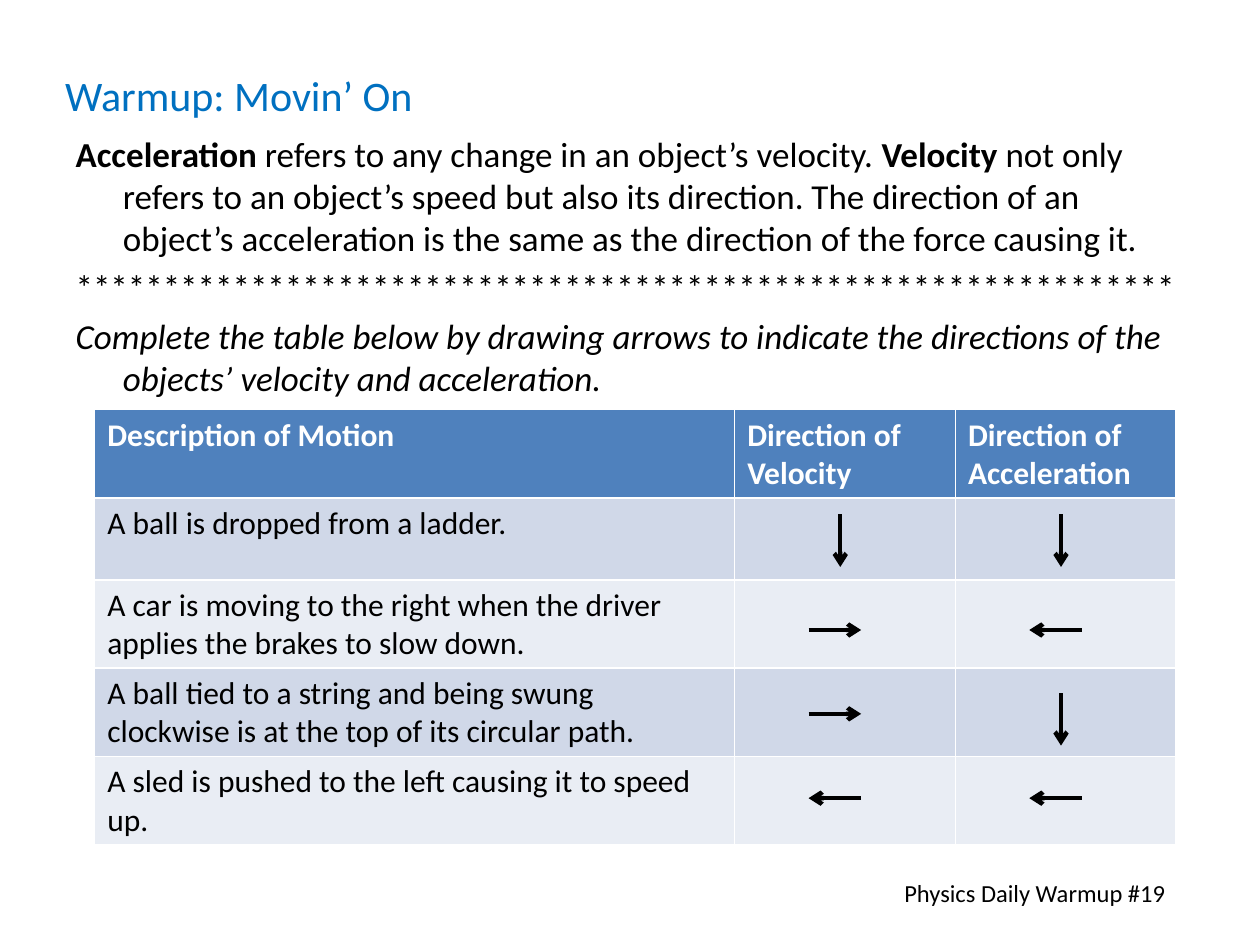
import dataclasses
import enum
import typing

import pptx
import pptx.dml.color
import pptx.enum.shapes
import pptx.enum.text
import pptx.oxml.ns
import pptx.util
from lxml import etree

Cm = pptx.util.Cm
RGB = pptx.dml.color.RGBColor


@dataclasses.dataclass(frozen=True)
class Theme:
    font: str = "Calibri"
    title: RGB = RGB(0x00, 0x70, 0xC0)
    ink: RGB = RGB(0x00, 0x00, 0x00)
    white: RGB = RGB(0xFF, 0xFF, 0xFF)
    header: RGB = RGB(0x4F, 0x81, 0xBD)
    bands: tuple = (RGB(0xD0, 0xD8, 0xE8), RGB(0xE9, 0xED, 0xF4))
    title_size: int = 24
    body_size: int = 20
    table_size: int = 18
    footer_size: int = 14
    arrow_width: float = 2.5


THEME = Theme()


class Direction(enum.Enum):
    DOWN = (0, 1)
    LEFT = (-1, 0)
    RIGHT = (1, 0)


class Run(typing.NamedTuple):
    text: str
    bold: bool = False
    italic: bool = False


class Motion(typing.NamedTuple):
    description: str
    arrow_y: float
    velocity: Direction
    acceleration: Direction


BODY = [
    [
        Run("Acceleration ", bold=True),
        Run("refers to any change in an object’s velocity. "),
        Run("Velocity ", bold=True),
        Run("not only refers to an object’s speed but also its direction. "
            "The direction of an object’s acceleration is the same as the "
            "direction of the force causing it."),
    ],
    [Run("*" * 63)],
    [Run("Complete the table below by drawing arrows to indicate the "
         "directions of the objects’ velocity and acceleration.", italic=True)],
]
HEADERS = ["Description of Motion", "Direction of Velocity", "Direction of Acceleration"]
MOTIONS = [
    Motion("A ball is dropped from a ladder.",
           10.79, Direction.DOWN, Direction.DOWN),
    Motion("A car is moving to the right when the driver applies the brakes to slow down.",
           12.7, Direction.RIGHT, Direction.LEFT),
    Motion("A ball tied to a string and being swung clockwise is at the top of its circular path.",
           14.39, Direction.RIGHT, Direction.DOWN),
    Motion("A sled is pushed to the left causing it to speed up.",
           16.09, Direction.LEFT, Direction.LEFT),
]
COLUMN_WIDTHS = [12.9, 4.45, 4.45]
ROW_HEIGHT = 1.65
ARROW_X = 16.83
ARROW_LENGTH = 1.06
DOWN_SHIFT = 0.11


def place(sp, left: float, top: float, width: float, height: float) -> None:
    sp.left, sp.top, sp.width, sp.height = Cm(left), Cm(top), Cm(width), Cm(height)


def add_run(p, run: Run, size: int, color: RGB) -> None:
    r = p.add_run()
    r.text = run.text
    f = r.font
    f.name, f.size, f.bold, f.italic = THEME.font, pptx.util.Pt(size), run.bold, run.italic
    f.color.rgb = color


def fill_title(sp) -> None:
    place(sp, 1.06, 1.06, 20.96, 1.7)
    tf = sp.text_frame
    tf.auto_size = pptx.enum.text.MSO_AUTO_SIZE.NONE
    tf.vertical_anchor = pptx.enum.text.MSO_ANCHOR.MIDDLE
    p = tf.paragraphs[0]
    p.alignment = pptx.enum.text.PP_ALIGN.LEFT
    add_run(p, Run("Warmup: Movin’ On"), THEME.title_size, THEME.title)


def fill_body(sp) -> None:
    place(sp, 1.27, 2.54, 22.86, 5.28)
    tf = sp.text_frame
    tf.auto_size = pptx.enum.text.MSO_AUTO_SIZE.NONE
    for i, runs in enumerate(BODY):
        p = tf.add_paragraph() if i else tf.paragraphs[0]
        etree.SubElement(p._p.get_or_add_pPr(), pptx.oxml.ns.qn("a:buNone"))
        for run in runs:
            add_run(p, run, THEME.body_size, THEME.ink)


def add_footer(s) -> None:
    sp = s.shapes.add_textbox(Cm(17.98), Cm(17.58), Cm(6.15), Cm(0.86))
    tf = sp.text_frame
    tf.word_wrap = True
    tf.auto_size = pptx.enum.text.MSO_AUTO_SIZE.SHAPE_TO_FIT_TEXT
    add_run(tf.paragraphs[0], Run("Physics Daily Warmup #19"), THEME.footer_size, THEME.ink)


def add_motion_table(s) -> None:
    rows = [HEADERS] + [[m.description, "", ""] for m in MOTIONS]
    table = s.shapes.add_table(
        len(rows), len(HEADERS), Cm(1.91), Cm(8.26),
        Cm(sum(COLUMN_WIDTHS)), Cm(ROW_HEIGHT * len(rows))).table
    for column, width in zip(table.columns, COLUMN_WIDTHS):
        column.width = Cm(width)
    for i, texts in enumerate(rows):
        is_header = i == 0
        for j, text in enumerate(texts):
            cell = table.cell(i, j)
            cell.fill.solid()
            cell.fill.fore_color.rgb = THEME.header if is_header else THEME.bands[(i - 1) % 2]
            if text:
                add_run(cell.text_frame.paragraphs[0], Run(text, bold=is_header),
                        THEME.table_size, THEME.white if is_header else THEME.ink)


def add_arrow(s, x: float, y: float, direction: Direction) -> None:
    """Draw an arrow centred on x, y; downward ones sit slightly right and low."""
    if direction is Direction.DOWN:
        x, y = x + DOWN_SHIFT, y + DOWN_SHIFT
    dx, dy = (d * ARROW_LENGTH / 2 for d in direction.value)
    c = s.shapes.add_connector(pptx.enum.shapes.MSO_CONNECTOR.STRAIGHT,
                               Cm(x - dx), Cm(y - dy), Cm(x + dx), Cm(y + dy))
    c.line.color.rgb = THEME.ink
    c.line.width = pptx.util.Pt(THEME.arrow_width)
    qn = pptx.oxml.ns.qn
    etree.SubElement(c.line._get_or_add_ln(), qn("a:tailEnd"), type="arrow")
    etree.SubElement(c._element.spPr, qn("a:effectLst"))


def main() -> None:
    prs = pptx.Presentation()
    prs.slide_width, prs.slide_height = Cm(25.4), Cm(19.05)
    s = prs.slides.add_slide(prs.slide_layouts[1])
    fill_title(s.shapes.title)
    fill_body(s.placeholders[1])
    add_footer(s)
    add_motion_table(s)
    for m in MOTIONS:
        for j, direction in enumerate((m.velocity, m.acceleration)):
            add_arrow(s, ARROW_X + j * COLUMN_WIDTHS[1], m.arrow_y, direction)
    prs.save("out.pptx")


if __name__ == "__main__":
    main()
